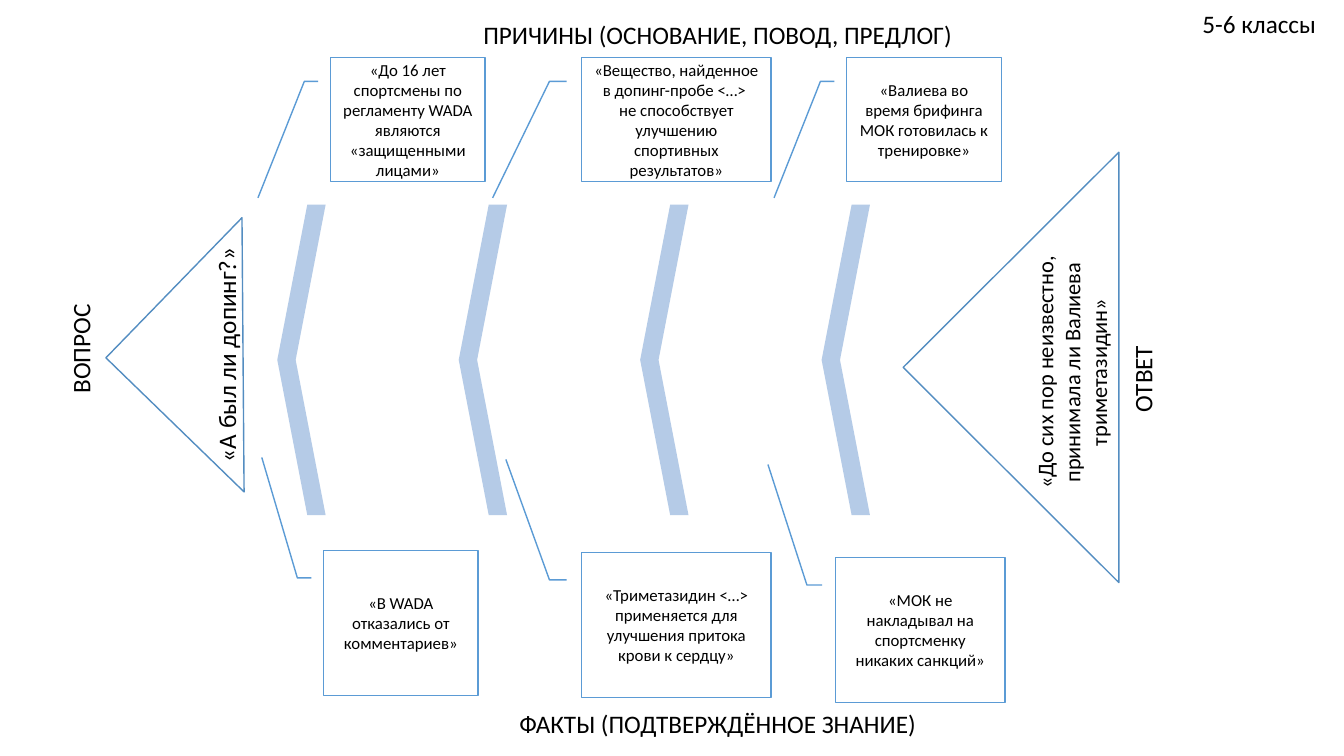
from dataclasses import dataclass

from pptx import Presentation
from pptx.dml.color import RGBColor
from pptx.enum.shapes import MSO_SHAPE
from pptx.enum.text import MSO_ANCHOR, MSO_AUTO_SIZE, PP_ALIGN
from pptx.util import Inches, Pt

BLACK = RGBColor(0x00, 0x00, 0x00)
WHITE = RGBColor(0xFF, 0xFF, 0xFF)
BONE_BLUE = RGBColor(0xB5, 0xCB, 0xE7)
FISH_BLUE = RGBColor(0x53, 0x8D, 0xC1)
CALLOUT_BLUE = RGBColor(0x5B, 0x9B, 0xD5)
FONT = "Calibri"

CHEVRON = MSO_SHAPE.CHEVRON
CALLOUT = MSO_SHAPE.LINE_CALLOUT_2
CENTER = PP_ALIGN.CENTER
RIGHT = PP_ALIGN.RIGHT
TOP = MSO_ANCHOR.TOP
MIDDLE = MSO_ANCHOR.MIDDLE
GROW = MSO_AUTO_SIZE.SHAPE_TO_FIT_TEXT
FIXED = MSO_AUTO_SIZE.NONE

POINTER_DOWN = (0.19, -0.08, 0.19, -0.17, 1.13, -0.47)
POINTER_UP = (0.19, -0.08, 0.19, -0.17, -0.64, -0.4)
BONE_COUNT = 4
BONE_WIDTH = 8.16

CAUSES = [
    (24.6, 30.6, 11.5, "«До 16 лет спортсмены по регламенту WADA являются «защищенными лицами»"),
    (43.28, 30.6, 14.1, "«Вещество, найденное в допинг-пробе <…> \vне способствует улучшению спортивных результатов»"),
    (63, 30.6, 11.5, "«Валиева во время брифинга МОК готовилась к тренировке»"),
]
FACTS = [
    (24.08, 2.86, 11.5, "«В WADA отказались от комментариев»"),
    (43.28, 3.81, 14.1, "«Триметазидин <…> применяется для улучшения притока крови к сердцу»"),
    (62.18, 6.19, 12.6, "«МОК не накладывал на спортсменку никаких санкций»"),
]


@dataclass
class Box:
    left: int
    top: int
    width: int
    height: int

    def point(self, across, down):
        return (round(self.left + self.width * across / 100),
                round(self.top + self.height * down / 100))

    def inner(self, across, down, width, height):
        return Box(*self.point(across, down),
                   round(self.width * width / 100), round(self.height * height / 100))

    def frame(self):
        return self.left, self.top, self.width, self.height


def write(shape, text, size, align=CENTER, anchor=TOP, fit=GROW):
    frame = shape.text_frame
    frame.text = text
    frame.word_wrap = True
    frame.auto_size = fit
    frame.vertical_anchor = anchor
    for para in frame.paragraphs:
        para.alignment = align
        for span in para.runs:
            span.font.name = FONT
            span.font.size = Pt(size)
            span.font.color.rgb = BLACK


def paint(shape, fill, line=None):
    shape.shadow.inherit = False
    shape.fill.solid()
    shape.fill.fore_color.rgb = fill
    if line is None:
        shape.line.fill.background()
    else:
        shape.line.color.rgb = line
        shape.line.width = Pt(1)


def add_label(page, box, text, size=18, align=CENTER):
    label = page.shapes.add_textbox(*box.frame())
    write(label, text, size, align)
    return label


def add_upright_label(page, center, length, thickness, text, size=18):
    box = Box(round(center[0] - length / 2), round(center[1] - thickness / 2),
              round(length), round(thickness))
    add_label(page, box, text, size).rotation = 270


def add_callouts(page, box, items, height, pointer):
    for left, top, width, text in items:
        callout = page.shapes.add_shape(CALLOUT, *box.inner(left, top, width, height).frame())
        for index, value in enumerate(pointer):
            callout.adjustments[index] = value
        paint(callout, WHITE, CALLOUT_BLUE)
        write(callout, text, 12, anchor=MIDDLE, fit=FIXED)


def add_causes(page, box):
    title = page.shapes.title
    place = box.inner(27.15, 7.47, 52.5, 21.33)
    title.left, title.top, title.width, title.height = place.frame()
    write(title, "ПРИЧИНЫ (ОСНОВАНИЕ, ПОВОД, ПРЕДЛОГ)", 18)
    add_callouts(page, box, CAUSES, 65.6, POINTER_DOWN)


def add_facts(page, box):
    add_callouts(page, box, FACTS, 68.57, POINTER_UP)
    add_label(page, box.inner(15.08, 75.24, 76.65, 19.05), "ФАКТЫ (ПОДТВЕРЖДЁННОЕ ЗНАНИЕ)")


def add_bones(page, box):
    step = (100 - BONE_WIDTH) / (BONE_COUNT - 1)
    for index in range(BONE_COUNT):
        place = box.inner(index * step, 0, BONE_WIDTH, 100)
        bone = page.shapes.add_shape(CHEVRON, *place.frame())
        bone.adjustments[0] = 0.62
        bone.rotation = 180
        paint(bone, BONE_BLUE)


def add_triangle(page, box, corners):
    start, *others = [box.point(*corner) for corner in corners]
    builder = page.shapes.build_freeform(*start)
    builder.add_line_segments(others, close=True)
    paint(builder.convert_to_shape(), WHITE, FISH_BLUE)


def add_question(page, box):
    add_triangle(page, box, [(0, 51.1), (98.5, 0), (100, 100)])
    thickness = box.width * 0.29
    add_upright_label(page, box.point(-18.6, 47.8), box.height * 1.08, thickness, "ВОПРОС")
    add_upright_label(page, box.point(86.9, 50), box.height * 1.12, thickness, "«А был ли допинг?»")


def add_answer(page, box):
    add_triangle(page, box, [(0, 50), (100, 0), (100, 100)])
    add_upright_label(page, box.point(111, 52.7), box.height * 0.69, box.width * 0.19, "ОТВЕТ")
    add_upright_label(page, box.point(78.5, 51.2), box.height * 0.72, box.width * 0.43,
                      "«До сих пор неизвестно, принимала ли Валиева триметазидин»", 16)


def main():
    deck = Presentation()
    deck.slide_width = Inches(13.33)
    deck.slide_height = Inches(7.5)
    page = deck.slides.add_slide(deck.slide_layouts.get_by_name("Title Only"))
    whole = Box(0, 0, deck.slide_width, deck.slide_height)
    add_bones(page, whole.inner(20.63, 27.07, 44.1, 41.07))
    add_question(page, whole.inner(7.88, 28.8, 10.28, 36.27))
    add_answer(page, whole.inner(67.2, 20.13, 16.05, 56.93))
    add_causes(page, whole.inner(0, 0, 100, 25))
    add_facts(page, whole.inner(0, 72, 100, 28))
    add_label(page, whole.inner(86.27, 0.4, 12.38, 5.33), "5-6 классы", align=RIGHT)
    deck.save("out.pptx")


if __name__ == "__main__":
    main()
